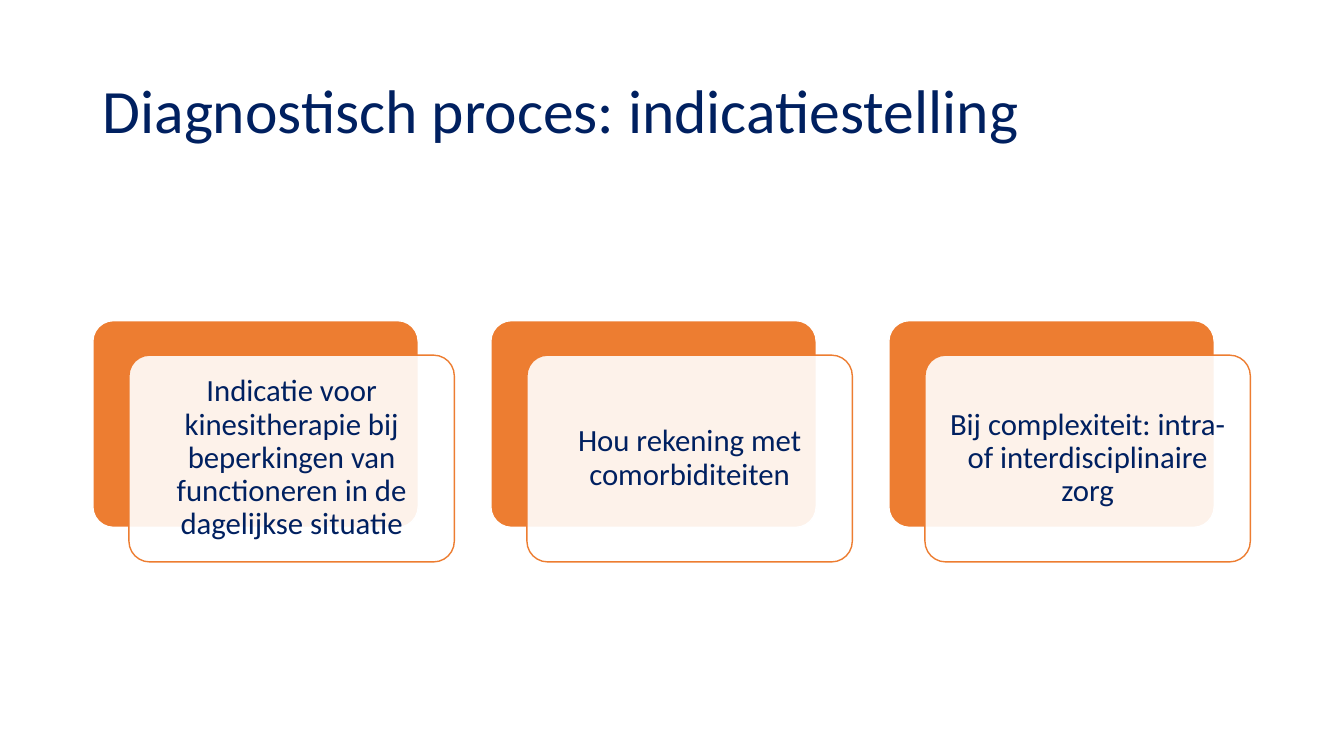
"""Build the slide on indication in the diagnostic process."""
from lxml import etree
from pptx import Presentation
from pptx.dml.color import RGBColor
from pptx.enum.shapes import MSO_SHAPE
from pptx.enum.text import MSO_ANCHOR, MSO_AUTO_SIZE, PP_ALIGN
from pptx.oxml.ns import qn
from pptx.util import Cm, Pt

TITLE = "Diagnostisch proces: indicatiestelling"
CARDS = [
    "Indicatie voor kinesitherapie bij beperkingen van functioneren in de dagelijkse situatie",
    "Hou rekening met comorbiditeiten",
    "Bij complexiteit: intra- of interdisciplinaire zorg",
]

NAVY = RGBColor(0x00, 0x20, 0x60)
ORANGE = RGBColor(0xED, 0x7D, 0x31)
WHITE = RGBColor(0xFF, 0xFF, 0xFF)
ROUND = MSO_SHAPE.ROUNDED_RECTANGLE
MIDDLE = MSO_ANCHOR.MIDDLE
FIXED = MSO_AUTO_SIZE.NONE
LEFT, CENTER = PP_ALIGN.LEFT, PP_ALIGN.CENTER

START, TOP, PITCH = 2.34, 8.08, 10.03
WIDE, HIGH = 8.2, 5.21
SHIFT, DROP = 0.91, 0.87
PAD = Cm(0.38)
FRAME = {"word_wrap": True, "auto_size": FIXED, "vertical_anchor": MIDDLE}
INSET = {f"margin_{side}": PAD for side in ("left", "right", "top", "bottom")}


def apply(item, values):
    """Set each named value on an item."""
    for name, value in values.items():
        setattr(item, name, value)


def write(frame, text, size, align):
    """Put one styled paragraph in a text frame."""
    apply(frame, FRAME)
    frame.text = text
    par = frame.paragraphs[0]
    apply(par, {"alignment": align, "line_spacing": 0.9})
    apply(par.font, {"name": "Calibri", "size": Pt(size)})
    par.font.color.rgb = NAVY


def panel(slide, left, top, fill, line):
    """Add one rounded panel."""
    box = slide.shapes.add_shape(ROUND, Cm(left), Cm(top), Cm(WIDE), Cm(HIGH))
    box.shadow.inherit = False
    box.adjustments[0] = 0.1
    box.fill.solid()
    box.fill.fore_color.rgb = fill
    box.line.color.rgb = line
    box.line.width = Pt(1)
    return box


def main():
    """Lay out the title and cards and save the deck."""
    deck = Presentation()
    apply(deck, {"slide_width": Cm(33.87), "slide_height": Cm(19.05)})
    slide = deck.slides.add_slide(deck.slide_layouts[5])
    title = slide.shapes.title
    apply(title, {"left": Cm(2.33), "top": Cm(1.01), "width": Cm(29.21), "height": Cm(3.68)})
    write(title.text_frame, TITLE, 44, LEFT)
    for step, text in enumerate(CARDS):
        left = START + step * PITCH
        panel(slide, left, TOP, ORANGE, WHITE)
        card = panel(slide, left + SHIFT, TOP + DROP, WHITE, ORANGE)
        tint = card.fill._xPr.find(qn("a:solidFill"))[0]
        etree.SubElement(tint, qn("a:alpha")).set("val", "90000")
        apply(card.text_frame, INSET)
        write(card.text_frame, text, 22, CENTER)
    deck.save("out.pptx")


if __name__ == "__main__":
    main()
